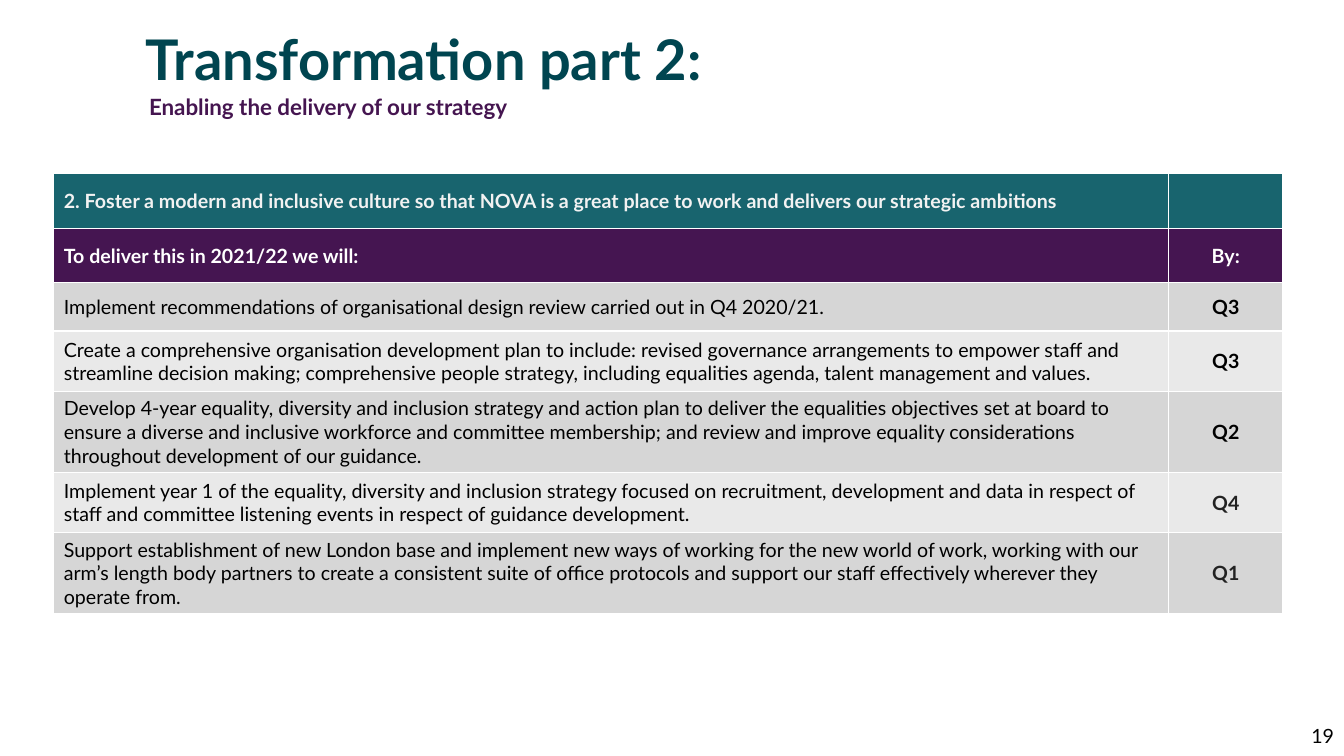
"""Build the transformation slide: a title, a subtitle and a table of deliverables."""
import lxml.etree
import pptx
import pptx.dml.color
import pptx.enum.text
import pptx.oxml.ns
import pptx.util

WIDTH, HEIGHT = 13.33, 7.5
FONT = "Lato"
TEAL, PURPLE, WHITE, BLACK, CHARCOAL = "18646E", "451551", "FFFFFF", "000000", "222222"
BANDS = ("D6D6D6", "E9E9E9")
COLUMNS = (11.06, 1.13)
ALIGN = pptx.enum.text.PP_ALIGN
MIDDLE = pptx.enum.text.MSO_ANCHOR.MIDDLE

HEADINGS = [
    ("2. Foster a modern and inclusive culture so that NOVA is a great place to work "
     "and delivers our strategic ambitions", "", TEAL, "F2F2F2"),
    ("To deliver this in 2021/22 we will:", "By:", PURPLE, WHITE),
]
DELIVERABLES = [
    ("Implement recommendations of organisational design review carried out in Q4 2020/21.",
     "Q3", BLACK, 0.48),
    ("Create a comprehensive organisation development plan to include: revised governance "
     "arrangements to empower staff and streamline decision making; comprehensive people "
     "strategy, including equalities agenda, talent management and values.",
     "Q3", BLACK, 0.6),
    ("Develop 4-year equality, diversity and inclusion strategy and action plan to deliver "
     "the equalities objectives set at board to ensure a diverse and inclusive workforce and "
     "committee membership; and review and improve equality considerations throughout "
     "development of our guidance.",
     "Q2", BLACK, 0.8),
    ("Implement year 1 of the equality, diversity and inclusion strategy focused on "
     "recruitment, development and data in respect of staff and committee listening events "
     "in respect of guidance development.",
     "Q4", CHARCOAL, 0.6),
    ("Support establishment of new London base and implement new ways of working for the new "
     "world of work, working with our arm’s length body partners to create a consistent suite "
     "of office protocols and support our staff effectively wherever they operate from.",
     "Q1", CHARCOAL, 0.8),
]


def colour(value):
    """Turn a hex string into a colour."""
    return pptx.dml.color.RGBColor.from_string(value)


def across(share):
    """Give a share of the slide's width as a length."""
    return pptx.util.Inches(WIDTH * share)


def down(share):
    """Give a share of the slide's height as a length."""
    return pptx.util.Inches(HEIGHT * share)


def write(frame, text, size, ink, bold=False, align=ALIGN.LEFT):
    """Set the one paragraph of a text frame and format it."""
    frame.text = text
    frame.word_wrap = True
    para = frame.paragraphs[0]
    para.alignment = align
    for span in para.runs:
        span.font.name = FONT
        span.font.size = pptx.util.Pt(size)
        span.font.bold = bold
        span.font.color.rgb = colour(ink)
    return para


def add_title(page, text):
    """Move the title placeholder into place and fill it."""
    title = page.shapes.title
    title.left, title.top = across(0.101), down(0.036)
    title.width, title.height = across(0.482), down(0.092)
    para = write(title.text_frame, text, 40, "004550", bold=True)
    para.line_spacing = 0.9
    title.text_frame.auto_size = pptx.enum.text.MSO_AUTO_SIZE.NONE
    title.text_frame.vertical_anchor = MIDDLE


def add_label(page, place, text, size, ink, **style):
    """Add a text box at the given shares of the slide."""
    left, top, width, height = place
    box = page.shapes.add_textbox(across(left), down(top), across(width), down(height))
    write(box.text_frame, text, size, ink, **style)
    return box


def outline(cell):
    """Draw a thin white border on all four sides of a cell."""
    properties = cell._tc.get_or_add_tcPr()
    for side in ("lnL", "lnR", "lnT", "lnB"):
        line = lxml.etree.SubElement(properties, pptx.oxml.ns.qn("a:" + side), w="12700")
        fill = lxml.etree.SubElement(line, pptx.oxml.ns.qn("a:solidFill"))
        lxml.etree.SubElement(fill, pptx.oxml.ns.qn("a:srgbClr"), val=WHITE)


def fill_cell(cell, text, fill, ink, bold, align):
    """Write, border and colour one table cell."""
    write(cell.text_frame, text, 14, ink, bold, align)
    cell.vertical_anchor = MIDDLE
    outline(cell)
    cell.fill.solid()
    cell.fill.fore_color.rgb = colour(fill)


def add_plan(page):
    """Add the table of headings, deliverables and quarters."""
    rows = [(task, due, fill, ink, ink, True, 0.54) for task, due, fill, ink in HEADINGS]
    for index, (task, due, ink, height) in enumerate(DELIVERABLES):
        rows.append((task, due, BANDS[index % 2], BLACK, ink, False, height))
    total = pptx.util.Inches(sum(row[-1] for row in rows))
    table = page.shapes.add_table(len(rows), len(COLUMNS), across(0.04), down(0.23),
                                  pptx.util.Inches(sum(COLUMNS)), total).table
    table.first_row = table.horz_banding = False
    for column, width in zip(table.columns, COLUMNS):
        column.width = pptx.util.Inches(width)
    for index, (task, due, fill, task_ink, due_ink, bold, height) in enumerate(rows):
        table.rows[index].height = pptx.util.Inches(height)
        fill_cell(table.cell(index, 0), task, fill, task_ink, bold, ALIGN.LEFT)
        fill_cell(table.cell(index, 1), due, fill, due_ink, True, ALIGN.CENTER)


def main():
    """Build and save the deck."""
    deck = pptx.Presentation()
    deck.slide_width, deck.slide_height = across(1), down(1)
    page = deck.slides.add_slide(deck.slide_layouts[5])
    add_title(page, "Transformation part 2:")
    add_label(page, (0.1035, 0.117, 0.504, 0.055), "Enabling the delivery of our strategy",
              16, "451550", bold=True)
    add_plan(page)
    number = add_label(page, (0.775, 0.946, 0.225, 0.053), "19", 14, BLACK, align=ALIGN.RIGHT)
    number.text_frame.vertical_anchor = MIDDLE
    deck.save("out.pptx")


if __name__ == "__main__":
    main()
